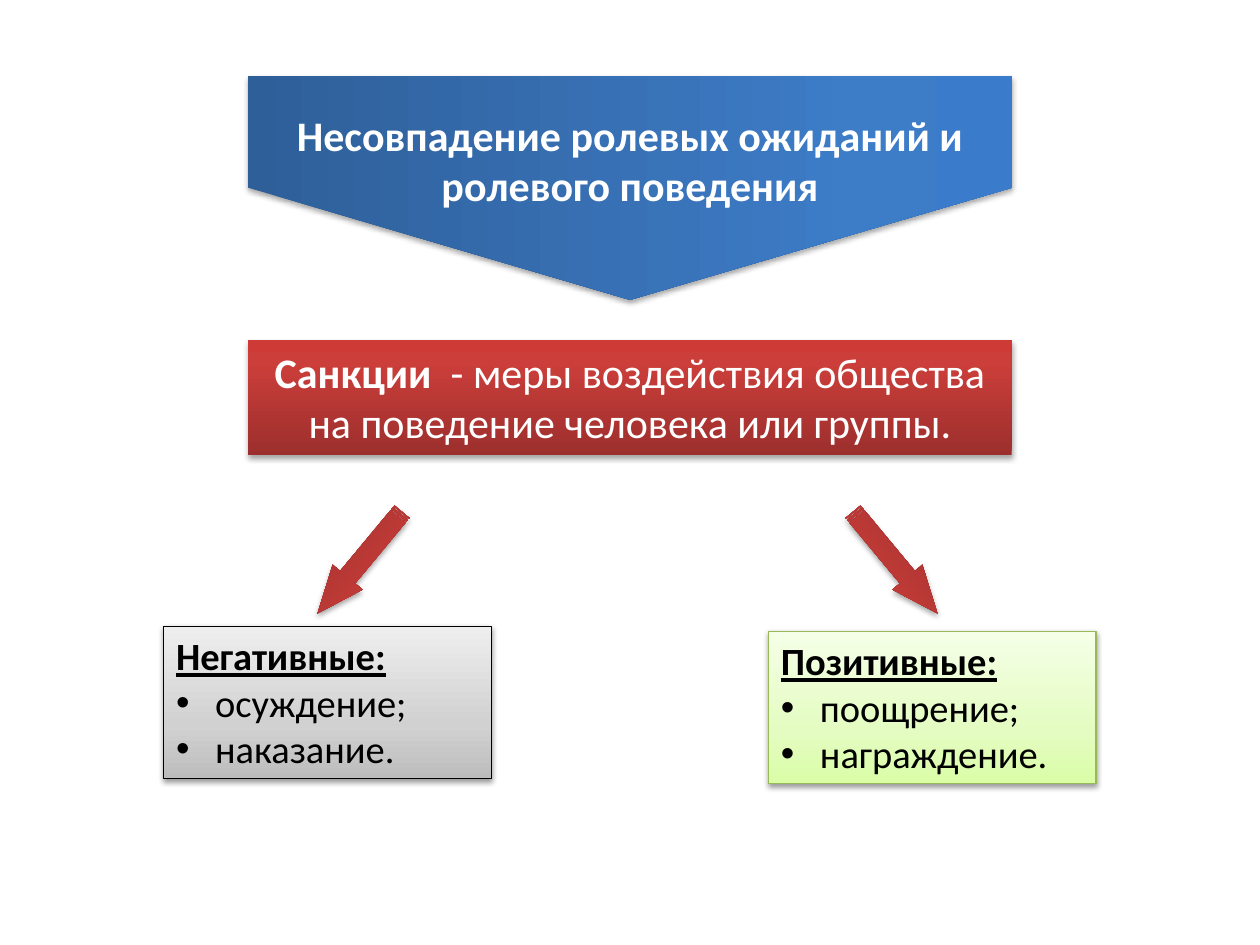
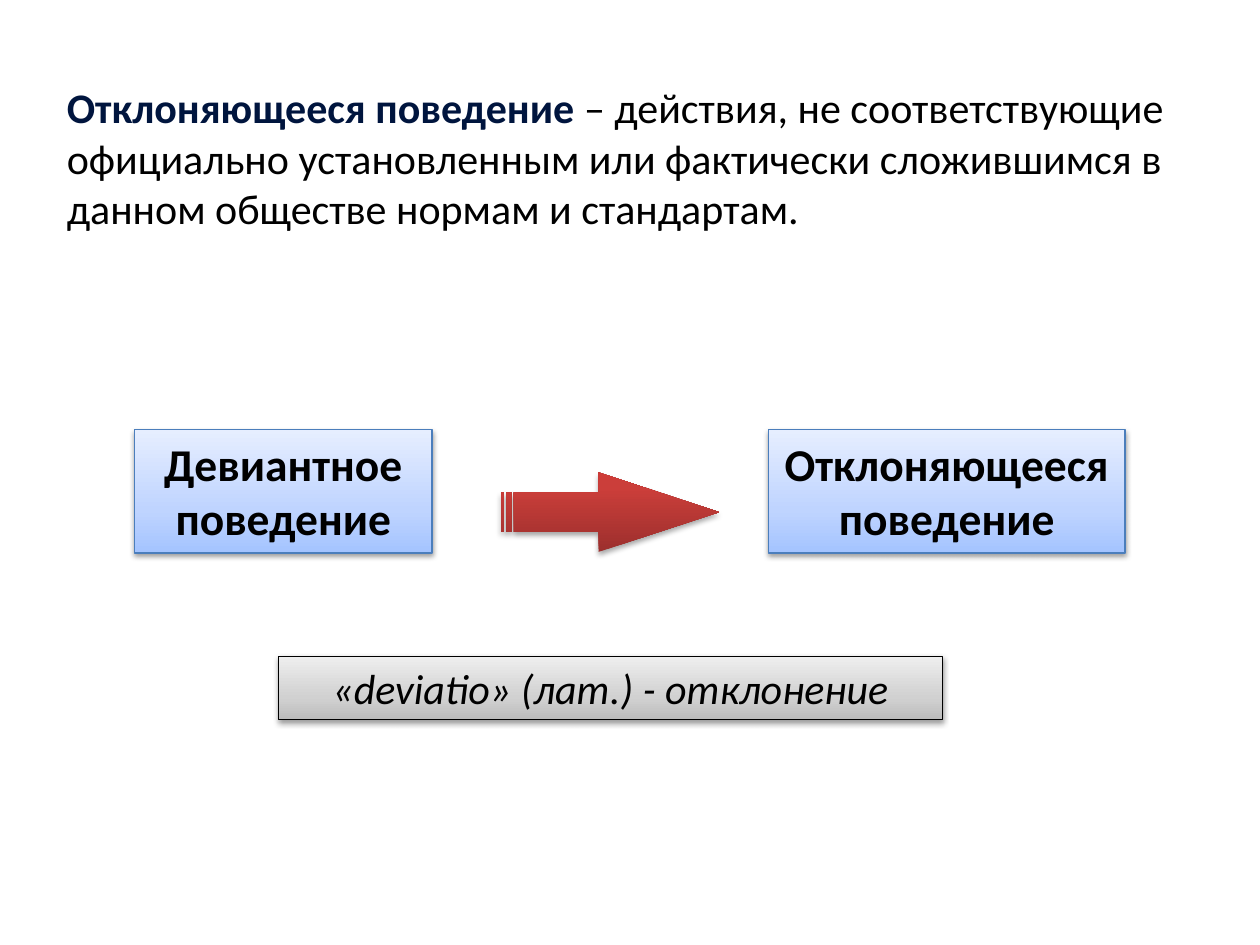
from collections import namedtuple

from lxml.etree import SubElement
from pptx import Presentation
from pptx.dml.color import RGBColor
from pptx.enum.shapes import MSO_SHAPE
from pptx.enum.text import MSO_ANCHOR, MSO_AUTO_SIZE, PP_ALIGN
from pptx.oxml.ns import qn
from pptx.util import Pt

PX = 9144  # EMU per px, 100 px to the inch
FONT = "Calibri"
BLACK, WHITE, NAVY = "000000", "FFFFFF", "00153E"

# stops: (percent, colour); shadow: (opacity percent, distance in EMU)
Look = namedtuple("Look", "stops line ink shadow")
STRONG, SOFT = (35, 23000), (38, 20000)
BLUE = Look([(0, "2F5F99"), (80, "3D7CC7"), (100, "3A7CCB")], None, WHITE, STRONG)
RED = Look([(0, "9C2F2D"), (80, "CB3E3A"), (100, "CE3B37")], None, WHITE, STRONG)
GRAY = Look([(0, "BDBDBD"), (35, "D1D1D1"), (100, "EEEEEE")], BLACK, BLACK, SOFT)
GREEN = Look([(0, "DAFDA7"), (35, "E4FCC2"), (100, "F5FFE7")], "98B955", BLACK, SOFT)
PALE_BLUE = Look([(0, "A4C4FF"), (35, "BFD4FF"), (100, "E6EEFF")], "4B7EBC", BLACK, SOFT)


def rgb(color):
    return RGBColor.from_string(color)


def add_color(parent, color):
    return SubElement(parent, qn("a:srgbClr"), val=color)


class Deck:
    def __init__(self):
        self.prs = Presentation()
        self.prs.slide_width, self.prs.slide_height = 1000 * PX, 750 * PX
        self.s = None

    def new_slide(self, layout):
        self.s = self.prs.slides.add_slide(self.prs.slide_layouts.get_by_name(layout))

    def font(self, r, size, color, marks=""):
        """Format a run; marks holds any of b, i and u."""
        f = r.font
        f.name, f.size = FONT, Pt(size)
        f.color.rgb = rgb(color)
        f.bold, f.italic, f.underline = ("b" in marks, "i" in marks, "u" in marks)

    def add_runs(self, p, runs, size, color, align):
        """Fill a paragraph with (text, marks) or (text, marks, colour) runs."""
        p.alignment = align
        for text, marks, *own in runs:
            r = p.add_run()
            r.text = text
            self.font(r, size, own[0] if own else color, marks)

    def title(self, x, y, w, h, runs, size):
        sp = self.s.shapes.title
        sp.left, sp.top, sp.width, sp.height = (v * PX for v in (x, y, w, h))
        tf = sp.text_frame
        tf.word_wrap, tf.auto_size = True, MSO_AUTO_SIZE.SHAPE_TO_FIT_TEXT
        tf.vertical_anchor = MSO_ANCHOR.TOP
        self.add_runs(tf.paragraphs[0], runs, size, BLACK, PP_ALIGN.LEFT)

    def shape(self, kind, x, y, w, h, look):
        """Add a preset shape with the gradient, line and shadow of a look."""
        sp = self.s.shapes.add_shape(kind, *(v * PX for v in (x, y, w, h)))
        sp.fill.gradient()
        sp.fill.gradient_angle = 90
        stops = sp._element.spPr.find(qn("a:gradFill")).find(qn("a:gsLst"))
        for old in list(stops):
            stops.remove(old)
        for percent, color in look.stops:
            add_color(SubElement(stops, qn("a:gs"), pos=str(percent * 1000)), color)
        if look.line:
            sp.line.color.rgb = rgb(look.line)
            sp.line.width = Pt(0.75)
        else:
            sp.line.fill.background()
        sp.shadow.inherit = False
        opacity, distance = look.shadow
        effects = sp._element.spPr.find(qn("a:effectLst"))
        shadow = SubElement(effects, qn("a:outerShdw"), blurRad="40000",
                            dist=str(distance), dir="5400000", rotWithShape="0")
        SubElement(add_color(shadow, BLACK), qn("a:alpha"), val=str(opacity * 1000))
        return sp

    def box(self, x, y, w, h, look, runs, size, align=PP_ALIGN.CENTER):
        sp = self.shape(MSO_SHAPE.RECTANGLE, x, y, w, h, look)
        tf = sp.text_frame
        tf.word_wrap, tf.auto_size = True, MSO_AUTO_SIZE.SHAPE_TO_FIT_TEXT
        tf.vertical_anchor = MSO_ANCHOR.TOP
        self.add_runs(tf.paragraphs[0], runs, size, look.ink, align)
        return tf

    def list_box(self, x, y, w, h, look, heading, items, size=22):
        tf = self.box(x, y, w, h, look, [(heading, "bu")], size, PP_ALIGN.LEFT)
        for item in items:
            p = tf.add_paragraph()
            self.add_runs(p, [(item, "")], size, look.ink, PP_ALIGN.LEFT)
            pPr = p._p.get_or_add_pPr()
            pPr.set("marL", str(31 * PX))
            pPr.set("indent", str(-31 * PX))
            SubElement(pPr, qn("a:buFont"), typeface="Arial")
            SubElement(pPr, qn("a:buChar"), char="•")

    def down_banner(self, x, y, w, h, look, text, size):
        """Add a pentagon turned to point down, its text kept level."""
        sp = self.shape(MSO_SHAPE.PENTAGON, x + (w - h) // 2, y + (h - w) // 2, h, w, look)
        sp.rotation = 90
        tf = sp.text_frame
        tf.word_wrap, tf.vertical_anchor = True, MSO_ANCHOR.MIDDLE
        tf._txBody.bodyPr.set("vert", "vert270")
        self.add_runs(tf.paragraphs[0], [(text, "b")], size, look.ink, PP_ALIGN.CENTER)

    def arrow(self, x, y, w, h, head, rotation=0, flip=False):
        sp = self.shape(MSO_SHAPE.STRIPED_RIGHT_ARROW, x, y, w, h, RED)
        sp.adjustments[0], sp.adjustments[1] = 0.5, head
        sp.rotation = rotation
        if flip:
            sp._element.spPr.xfrm.set("flipH", "1")


def sanctions(deck):
    deck.new_slide("Blank")
    deck.down_banner(197, 60, 606, 178, BLUE,
                     "Несовпадение ролевых ожиданий и ролевого поведения", 24)
    deck.box(197, 270, 606, 91, RED, [
        ("Санкции ", "b"),
        (" - меры воздействия общества на поведение человека или группы.", "")], 24)
    tilt = 129.7
    deck.arrow(233, 431, 105, 31, 1.21, tilt)
    deck.arrow(658, 431, 105, 31, 1.21, 360 - tilt, flip=True)
    deck.list_box(130, 497, 260, 121, GRAY, "Негативные:", ["осуждение;", "наказание."])
    deck.list_box(610, 501, 260, 121, GREEN, "Позитивные:", ["поощрение;", "награждение."])


def deviation(deck):
    deck.new_slide("Title Only")
    deck.title(43, 60, 929, 131, [
        ("Отклоняющееся поведение ", "b", NAVY),
        ("– действия, не соответствующие официально установленным или фактически "
         "сложившимся в данном обществе нормам и стандартам.", "")], 24)
    for x, w, term in [(107, 236, "Девиантное поведение"),
                       (610, 283, "Отклоняющееся поведение")]:
        deck.box(x, 341, w, 98, PALE_BLUE, [(term, "b")], 26)
    deck.arrow(398, 375, 173, 63, 1.52)
    deck.box(221, 521, 527, 50, GRAY, [("«deviatio» (лат.) - отклонение", "i")], 24)


def main():
    deck = Deck()
    sanctions(deck)
    deviation(deck)
    deck.prs.save("out.pptx")


if __name__ == "__main__":
    main()
